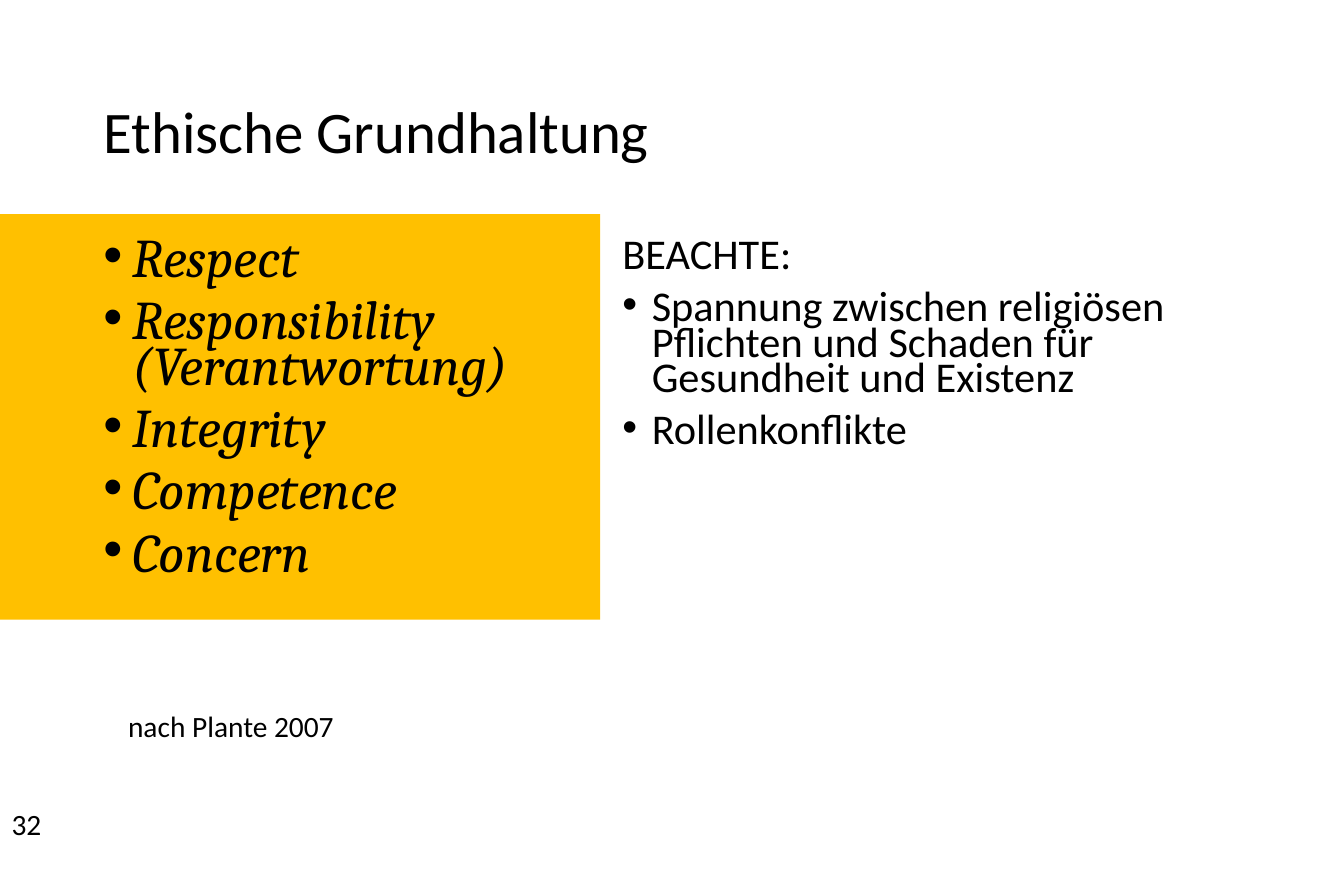
from lxml import etree
from pptx import Presentation
from pptx.dml.color import RGBColor
from pptx.enum.shapes import MSO_SHAPE
from pptx.enum.text import MSO_ANCHOR
from pptx.oxml.ns import qn
from pptx.util import Pt

RECT = MSO_SHAPE.RECTANGLE
TOP, MIDDLE = MSO_ANCHOR.TOP, MSO_ANCHOR.MIDDLE
BLACK, AMBER = "000000", "FFC000"
INDENT = 18

VALUES = ["Respect", "Responsibility (Verantwortung)", "Integrity",
          "Competence", "Concern"]
CONFLICTS = ["Spannung zwischen religiösen Pflichten und Schaden für "
             "Gesundheit und Existenz", "Rollenkonflikte"]


def color(hex_string):
    return RGBColor.from_string(hex_string)


def add_bullet(p):
    pPr = p._p.get_or_add_pPr()
    pPr.set("marL", str(Pt(INDENT)))
    pPr.set("indent", str(-Pt(INDENT)))
    etree.SubElement(pPr, qn("a:buFont")).set("typeface", "Arial")
    etree.SubElement(pPr, qn("a:buChar")).set("char", "•")


def add_text(s, box, lines, size, font="Calibri", italic=False,
             spacing=None, anchor=TOP):
    """Write (text, bulleted) lines into a text box."""
    tf = s.shapes.add_textbox(*map(Pt, box)).text_frame
    tf.word_wrap = True
    tf.vertical_anchor = anchor
    for i, (text, bulleted) in enumerate(lines):
        p = tf.paragraphs[0] if i == 0 else tf.add_paragraph()
        if spacing:
            p.line_spacing = spacing
        if i:
            p.space_before = Pt(10)
        if bulleted:
            add_bullet(p)
        r = p.add_run()
        r.text = text
        r.font.name = font
        r.font.size = Pt(size)
        r.font.italic = italic
        r.font.color.rgb = color(BLACK)


def add_values(s, box):
    # Amber band from the slide edge, with the list indented in it
    left, top, width, height = box
    band = s.shapes.add_shape(RECT, *map(Pt, box))
    band.shadow.inherit = False
    band.fill.solid()
    band.fill.fore_color.rgb = color(AMBER)
    band.line.fill.background()
    add_text(s, (left + 56.2, top + 13, width - 57.6, height - 13),
             [(v, True) for v in VALUES], 33.3, "Cambria", True, 0.7)


def add_conflicts(s, box):
    lines = [("BEACHTE:", False)] + [(c, True) for c in CONFLICTS]
    add_text(s, box, lines, 25.9, spacing=0.7)


def build_slide(prs):
    s = prs.slides.add_slide(prs.slide_layouts[6])
    # Slide number and title
    add_text(s, (0, 489.6, 88.6, 39.6), [("32", False)], 18)
    add_text(s, (56.2, 52.6, 709.2, 59), [("Ethische Grundhaltung", False)],
             36, spacing=0.9, anchor=MIDDLE)
    # Two columns
    add_values(s, (0, 131, 367.2, 248))
    add_conflicts(s, (373.7, 144, 424.8, 342.7))
    # Reference
    add_text(s, (71.3, 429.8, 269.3, 28.8), [("nach Plante 2007", False)], 18)


def main():
    prs = Presentation()
    prs.slide_width, prs.slide_height = Pt(822.24), Pt(540)
    build_slide(prs)
    prs.save("out.pptx")


if __name__ == "__main__":
    main()
